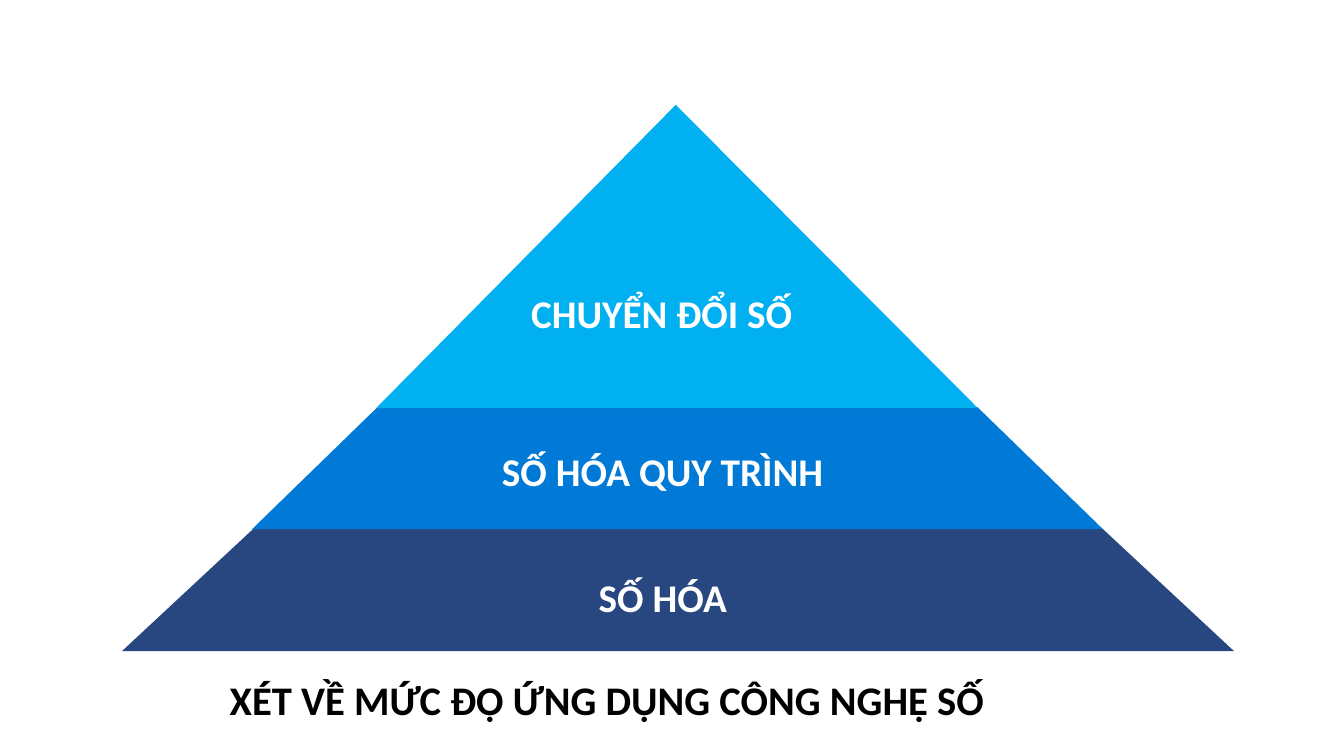
from pptx import Presentation
from pptx.dml.color import RGBColor
from pptx.enum.shapes import MSO_SHAPE as Kind
from pptx.enum.text import MSO_AUTO_SIZE as Fit
from pptx.util import Inches, Pt

NAVY = RGBColor(0x28, 0x47, 0x80)
BLUE = RGBColor(0x00, 0x7A, 0xD6)
SKY = RGBColor(0x00, 0xB0, 0xF0)
WHITE = RGBColor(0xFF, 0xFF, 0xFF)
BLACK = RGBColor(0x00, 0x00, 0x00)


class Deck:
    """Holds the text style and the current slide."""

    font = "Calibri"

    def __init__(self):
        self.file = Presentation()
        self.file.slide_width = Inches(13.33)
        self.file.slide_height = Inches(7.5)
        self.slide = self.file.slides.add_slide(self.file.slide_layouts[6])

    def tier(self, kind, box, slant, fill):
        shape = self.slide.shapes.add_shape(kind, *map(Inches, box))
        shape.adjustments[0] = slant
        shape.shadow.inherit = False
        shape.fill.solid()
        shape.fill.fore_color.rgb = fill
        shape.line.fill.background()

    def label(self, text, box, size, color, lead=None):
        frame = self.slide.shapes.add_textbox(*map(Inches, box)).text_frame
        frame.word_wrap = True
        frame.auto_size = Fit.SHAPE_TO_FIT_TEXT
        para = frame.paragraphs[0]
        if lead:
            para.line_spacing = Pt(lead)
        run = para.add_run()
        run.text = text
        run.font.name = self.font
        run.font.size = Pt(size)
        run.font.bold = True
        run.font.color.rgb = color


def main():
    deck = Deck()
    tiers = [
        (Kind.TRAPEZOID, (1.21, 5.25, 11.03, 1.21), 1.074, NAVY,
         "SỐ HÓA", (5.84, 5.58, 1.74, 0.6)),
        (Kind.TRAPEZOID, (2.5, 4.04, 8.44, 1.21), 1.028, BLUE,
         "SỐ HÓA QUY TRÌNH", (4.88, 4.33, 4.38, 0.6)),
        (Kind.ISOSCELES_TRIANGLE, (3.73, 1.04, 5.97, 3.01), 0.498, SKY,
         "CHUYỂN ĐỔI SỐ", (5.17, 2.76, 4.38, 0.6)),
    ]
    for kind, box, slant, fill, text, spot in tiers:
        deck.tier(kind, box, slant, fill)
        deck.label(text, spot, 28, WHITE, 38)
    deck.label("XÉT VỀ MỨC ĐỘ ỨNG DỤNG CÔNG NGHỆ SỐ",
               (2.18, 6.65, 11.82, 1.08), 29, BLACK)
    deck.file.save("out.pptx")


if __name__ == "__main__":
    main()
